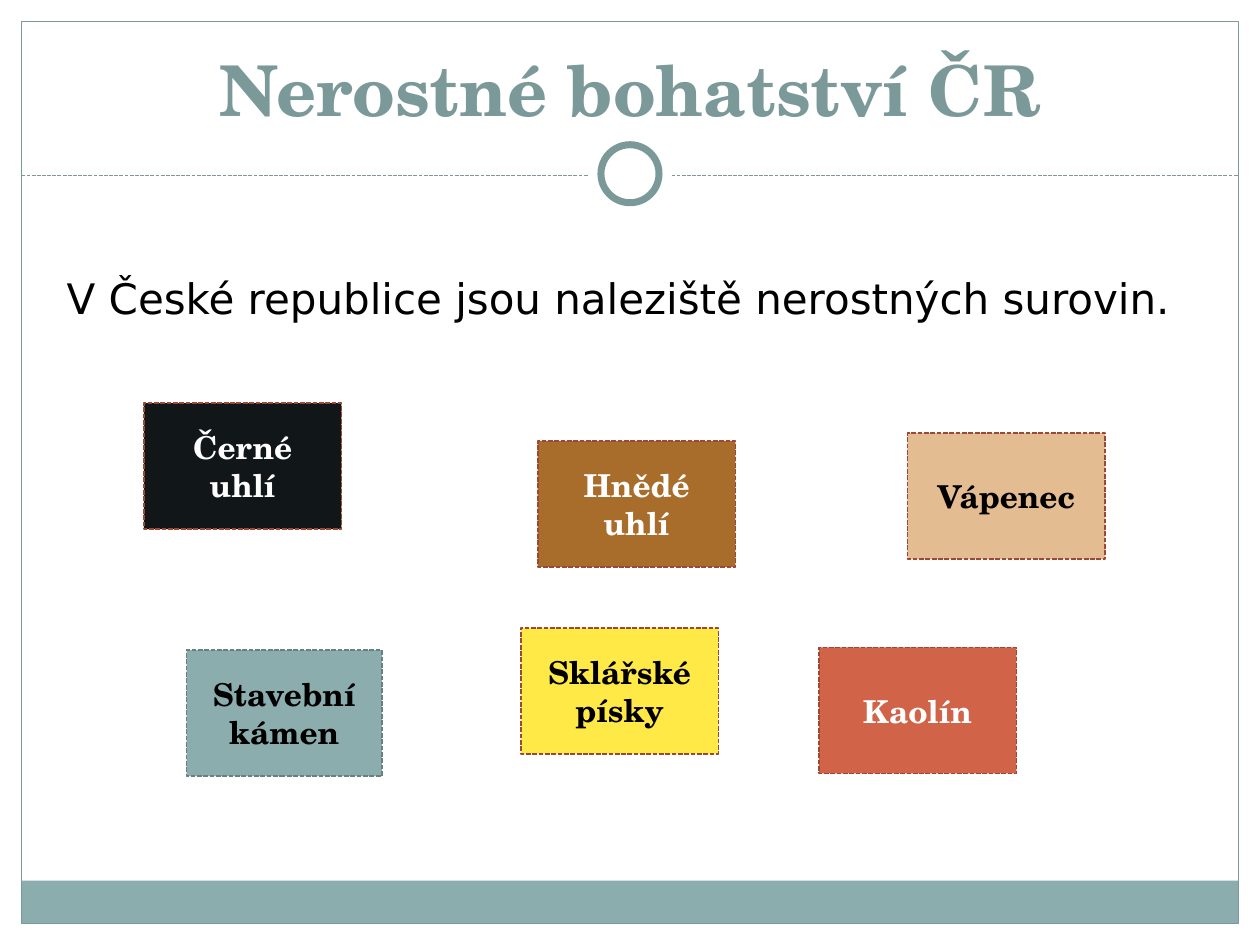
from lxml import etree
from pptx import Presentation
from pptx.dml.color import RGBColor
from pptx.enum.dml import MSO_LINE
from pptx.enum.shapes import MSO_CONNECTOR, MSO_SHAPE as Shape
from pptx.enum.text import MSO_ANCHOR as Anchor, MSO_AUTO_SIZE as AutoSize, PP_ALIGN as Align
from pptx.oxml.ns import qn
from pptx.util import Pt

COLOURS = {
    "white": "FFFFFF", "black": "000000", "teal": "7C999A", "sage": "8CADAE",
    "rust": "9B4936", "slate": "688081", "coal": "111618", "lignite": "A96D2B",
    "limestone": "E3BC92", "kaolin": "D16349", "sand": "FFE947",
}
WIDTH, HEIGHT = 720, 540
MARGIN = 12.24


def colour(name):
    return RGBColor.from_string(COLOURS[name])


class SlideBuilder:
    heading_font = "TeX Gyre Schola"
    body_font = "DejaVu Sans"

    def __init__(self, slide):
        self.slide = slide

    def outline(self, line, name, width, dashed=False):
        line.color.rgb = colour(name)
        line.width = Pt(width)
        if dashed:
            line.dash_style = MSO_LINE.SQUARE_DOT

    def set_text(self, frame, text, size, ink, font, bold=False, align=Align.CENTER):
        paragraph = frame.paragraphs[0]
        paragraph.text = text
        paragraph.alignment = align
        paragraph.font.name = font
        paragraph.font.size = Pt(size)
        paragraph.font.bold = bold
        paragraph.font.color.rgb = colour(ink)

    def shape(self, kind, box, fill=None, line=None, width=0.75, dashed=False):
        shape = self.slide.shapes.add_shape(kind, *map(Pt, box))
        shape.shadow.inherit = False
        if fill:
            shape.fill.solid()
            shape.fill.fore_color.rgb = colour(fill)
        else:
            shape.fill.background()
        if line:
            self.outline(shape.line, line, width, dashed)
        else:
            shape.line.fill.background()
        return shape

    def circle(self, centre_x, centre_y, size, **style):
        box = (centre_x - size / 2, centre_y - size / 2, size, size)
        return self.shape(Shape.OVAL, box, **style)

    def rule(self, left, right, y):
        rule = self.slide.shapes.add_connector(
            MSO_CONNECTOR.STRAIGHT, Pt(left), Pt(y), Pt(right), Pt(y))
        self.outline(rule.line, "teal", 0.75, dashed=True)
        etree.SubElement(rule._element.spPr, qn("a:effectLst"))

    def title(self, text, box):
        frame = self.slide.shapes.add_textbox(*map(Pt, box)).text_frame
        frame.word_wrap = True
        frame.vertical_anchor = Anchor.BOTTOM
        self.set_text(frame, text, 40, "teal", self.heading_font, bold=True)

    def sentence(self, text, box):
        frame = self.slide.shapes.add_textbox(*map(Pt, box)).text_frame
        frame.word_wrap = False
        frame.auto_size = AutoSize.SHAPE_TO_FIT_TEXT
        self.set_text(frame, text, 24, "black", self.body_font, align=Align.LEFT)

    def mineral(self, text, left, top, fill, ink, edge="rust", width=113):
        card = self.shape(Shape.RECTANGLE, (left, top, width, 72), fill, edge, 0.9, dashed=True)
        frame = card.text_frame
        frame.word_wrap = True
        frame.vertical_anchor = Anchor.MIDDLE
        self.set_text(frame, text, 18, ink, self.heading_font, bold=True)


def main():
    deck = Presentation()
    deck.slide_width, deck.slide_height = Pt(WIDTH), Pt(HEIGHT)
    builder = SlideBuilder(deck.slides.add_slide(deck.slide_layouts[6]))

    # Frame with footer band
    inner_width = WIDTH - 2 * MARGIN
    builder.shape(Shape.RECTANGLE, (MARGIN, 503.2, inner_width, 24.5), fill="sage")
    builder.shape(Shape.RECTANGLE, (MARGIN, MARGIN, inner_width, HEIGHT - 2 * MARGIN), line="teal")

    # Divider with ring
    builder.rule(MARGIN, WIDTH - MARGIN, 100.5)
    builder.circle(WIDTH / 2, 99.3, 48, fill="white")
    builder.circle(WIDTH / 2, 99.3, 33.2, fill="white", line="teal", width=4)

    # Title and introduction
    builder.title("Nerostné bohatství ČR", (24, 18, 672, 60))
    builder.sentence("V České republice jsou naleziště nerostných surovin.", (31, 152, 666, 36))

    # Minerals
    builder.mineral("Černé uhlí", 82.2, 230.4, "coal", "white")
    builder.mineral("Hnědé uhlí", 307.3, 252, "lignite", "white")
    builder.mineral("Vápenec", 518.6, 247.5, "limestone", "black")
    builder.mineral("Kaolín", 467.9, 370, "kaolin", "white")
    builder.mineral("Sklářské písky", 297.6, 358.8, "sand", "black")
    builder.mineral("Stavební kámen", 106.6, 371.5, "sage", "black", edge="slate", width=111.6)

    deck.save("out.pptx")


if __name__ == "__main__":
    main()
